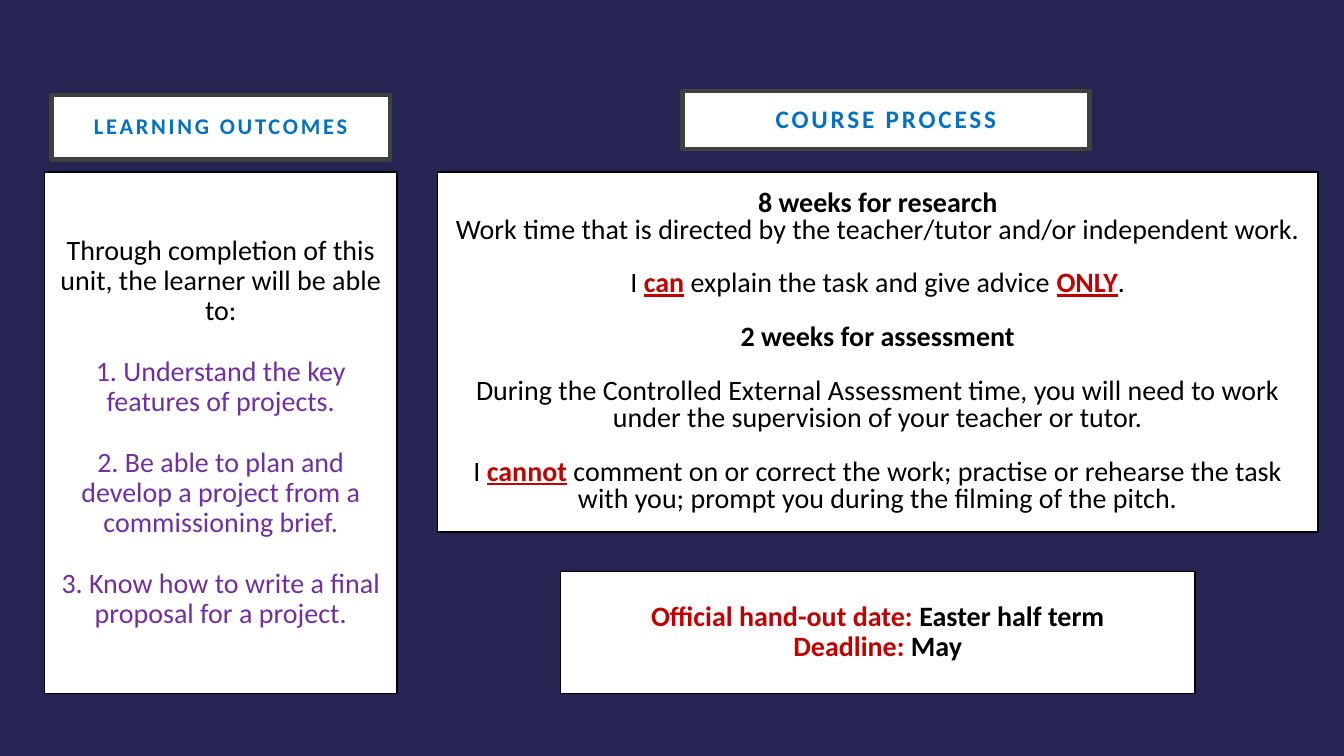
from pptx import Presentation
from pptx.dml.color import RGBColor
from pptx.enum.shapes import MSO_SHAPE
from pptx.enum.text import MSO_ANCHOR, PP_ALIGN
from pptx.util import Cm, Pt

NAVY, WHITE, BLACK, GREY = "262452", "FFFFFF", "000000", "404040"
BLUE, PURPLE, RED = "0070C0", "7030A0", "C00000"


def paint(fill, color):
    fill.solid()
    fill.fore_color.rgb = RGBColor.from_string(color)


def add_box(place, edge, width, paras, size=20, lead=0.9):
    """Add a white box; paras holds (space before, runs), a run (text, colour, style)."""
    box = slide.shapes.add_shape(MSO_SHAPE.RECTANGLE, *[Cm(n) for n in place])
    box.shadow.inherit = False
    paint(box.fill, WHITE)
    paint(box.line.fill, edge)
    box.line.width = Pt(width)
    frame = box.text_frame
    frame.word_wrap = True
    frame.vertical_anchor = MSO_ANCHOR.MIDDLE
    for i, (gap, runs) in enumerate(paras):
        para = frame.paragraphs[0] if i == 0 else frame.add_paragraph()
        para.alignment = PP_ALIGN.CENTER
        para.line_spacing = lead
        para.space_before = Pt(gap)
        for text, color, style in runs:
            run = para.add_run()
            run.text = text
            font = run.font
            font.name = "Calibri"
            font.size = Pt(size)
            font.bold = "b" in style
            font.underline = "u" in style
            paint(font.fill, color)
    return box


prs = Presentation()
prs.slide_width, prs.slide_height = Cm(33.87), Cm(19.05)
slide = prs.slides.add_slide(prs.slide_layouts[6])
paint(slide.background.fill, NAVY)

# Headings
heads = [
    ("LEARNING OUTCOMES", (1.3, 2.39, 8.53, 1.63), 16),
    ("COURSE PROCESS", (17.2, 2.29, 10.26, 1.47), 18),
]
for title, place, size in heads:
    head = add_box(place, GREY, 3, [(0, [(title, BLUE, "b")])], size)
    frame = head.text_frame
    frame.margin_left = frame.margin_right = Cm(0.76)
    frame.margin_top = frame.margin_bottom = Cm(0.51)
    for run in frame.paragraphs[0].runs:
        run._r.get_or_add_rPr().set("spc", "200")

# Learning outcomes
goals = [
    "1. Understand the key features of projects.",
    "2. Be able to plan and develop a project from a commissioning brief.",
    "3. Know how to write a final proposal for a project.",
]
intro = "Through completion of this unit, the learner will be able to:"
paras = [(0, [(intro, BLACK, "")])]
paras += [(21.6, [(goal, PURPLE, "")]) for goal in goals]
add_box((1.12, 4.34, 8.89, 13.13), BLACK, 1, paras)

# Course process
gap = 19.2
steps = [
    (0, [("8 weeks for research", BLACK, "b")]),
    (0, [("Work time that is directed by the teacher/tutor and/or "
          "independent work.", BLACK, "")]),
    (gap, [("I ", BLACK, ""), ("can", RED, "bu"),
           (" explain the task and give advice ", BLACK, ""),
           ("ONLY", RED, "bu"), (".", BLACK, "")]),
    (gap, [("2 weeks for assessment", BLACK, "b")]),
    (gap, [("During the Controlled External Assessment time, you will need to "
            "work under the supervision of your teacher or tutor.", BLACK, "")]),
    (gap, [("I ", BLACK, ""), ("cannot", RED, "bu"),
           (" comment on or correct the work; practise or rehearse the task "
            "with you; prompt you during the filming of the pitch.", BLACK, "")]),
]
add_box((11.02, 4.34, 22.2, 9.07), BLACK, 1, steps, lead=0.8)

# Dates
dates = [("Official hand-out date: ", "Easter half term"), ("Deadline: ", "May")]
paras = [(0, [(label, RED, "b"), (when, BLACK, "b")]) for label, when in dates]
add_box((14.12, 14.4, 16, 3.07), BLACK, 1, paras)

prs.save("out.pptx")
